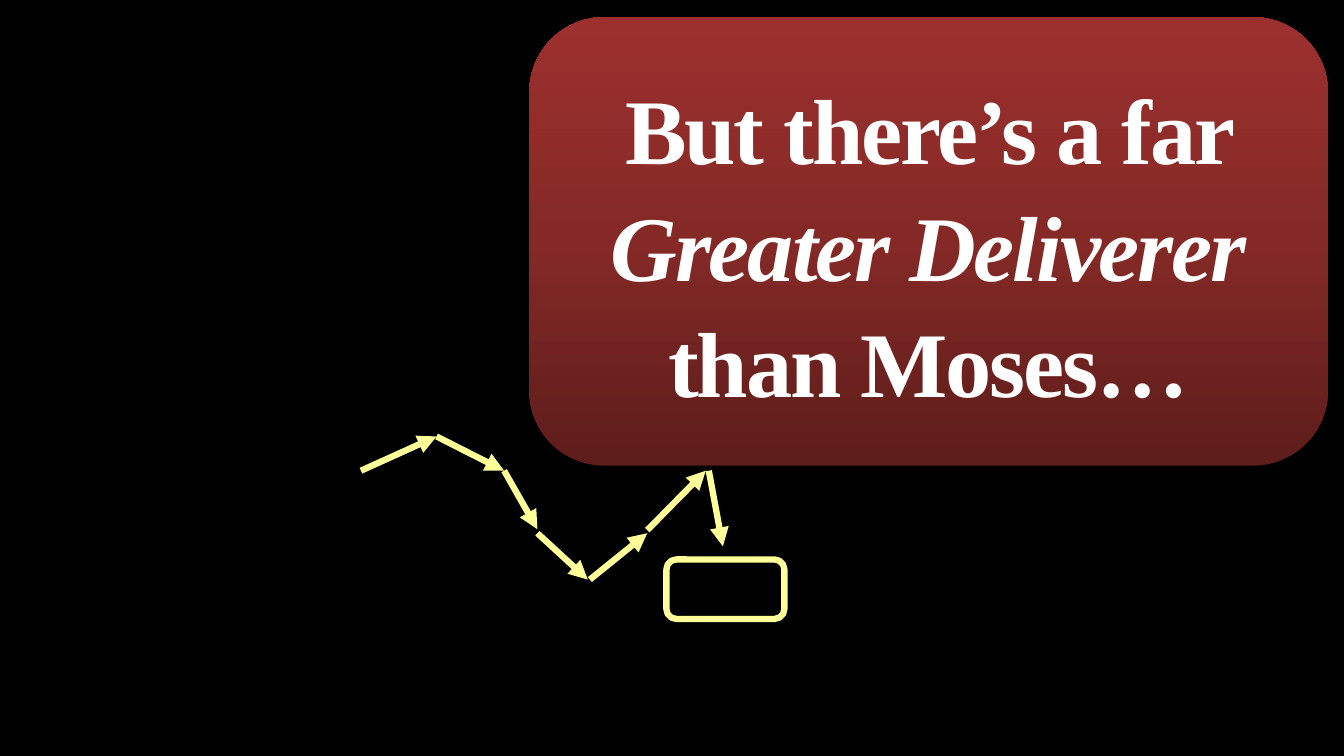
from copy import deepcopy
from dataclasses import dataclass

from lxml.etree import SubElement
from pptx import Presentation
from pptx.dml.color import RGBColor
from pptx.enum.shapes import MSO_CONNECTOR, MSO_SHAPE
from pptx.enum.text import MSO_ANCHOR, PP_ALIGN
from pptx.oxml.ns import qn
from pptx.util import Inches, Pt

MESSAGE = [("But there’s a far ", False), ("Greater Deliverer", True), (" than Moses…", False)]
MESSAGE_BOX = (5.25, 0.17, 7.92, 4.45)
DESTINATION_BOX = (6.61, 5.55, 1.17, 0.59)
ROUTE = [
    ((3.58, 4.67), (4.33, 4.33)),
    ((4.33, 4.33), (5, 4.67)),
    ((5, 4.67), (5.33, 5.25)),
    ((5.33, 5.29), (5.83, 5.75)),
    ((5.85, 5.75), (6.42, 5.29)),
    ((6.42, 5.26), (7, 4.67)),
    ((7.03, 4.67), (7.17, 5.42)),
]


@dataclass
class Theme:
    background: str = "000000"
    route: str = "FFFF99"
    text: str = "FFFFFF"
    gradient: tuple = ((0, "5D1D1B"), (0.5, "842926"), (1, "9C302E"))
    font: str = "Times New Roman"
    message_size: float = 66
    message_tracking: float = -1.5
    line_width: float = 4.5


theme = Theme()


def color(value):
    return RGBColor.from_string(value)


def style_line(line):
    line.color.rgb = color(theme.route)
    line.width = Pt(theme.line_width)


def add_arrow(slide, start, end):
    points = [Inches(value) for value in (*start, *end)]
    connector = slide.shapes.add_connector(MSO_CONNECTOR.STRAIGHT, *points)
    style_line(connector.line)
    properties = connector._element.spPr
    SubElement(properties.find(qn("a:ln")), qn("a:tailEnd"), type="triangle")
    SubElement(properties, qn("a:effectLst"))


def add_rounded_box(slide, box):
    shape = slide.shapes.add_shape(MSO_SHAPE.ROUNDED_RECTANGLE, *map(Inches, box))
    shape.shadow.inherit = False
    return shape


def fill_gradient(fill, stops, angle):
    fill.gradient()
    fill.gradient_angle = angle
    first = fill.gradient_stops[0]._gs
    first.addnext(deepcopy(first))
    for stop, (position, value) in zip(fill.gradient_stops, stops):
        stop.position = position
        stop.color.rgb = color(value)


def write_text(shape, runs, *, size, font, text_color, bold, tracking, line_spacing):
    frame = shape.text_frame
    frame.word_wrap = True
    frame.vertical_anchor = MSO_ANCHOR.MIDDLE
    paragraph = frame.paragraphs[0]
    paragraph.alignment = PP_ALIGN.CENTER
    paragraph.line_spacing = line_spacing
    for text, italic in runs:
        run = paragraph.add_run()
        run.text = text
        run.font.name = font
        run.font.size = Pt(size)
        run.font.bold = bold
        run.font.italic = italic
        run.font.color.rgb = color(text_color)
        run.font._element.set("spc", str(int(tracking * 100)))


def main():
    presentation = Presentation()
    presentation.slide_width = Inches(13.33)
    presentation.slide_height = Inches(7.5)
    slide = presentation.slides.add_slide(presentation.slide_layouts[6])
    slide.background.fill.solid()
    slide.background.fill.fore_color.rgb = color(theme.background)

    for start, end in ROUTE:
        add_arrow(slide, start, end)

    destination = add_rounded_box(slide, DESTINATION_BOX)
    destination.fill.background()
    style_line(destination.line)

    message = add_rounded_box(slide, MESSAGE_BOX)
    fill_gradient(message.fill, theme.gradient, 90)
    message.line.fill.background()
    write_text(
        message, MESSAGE, size=theme.message_size, font=theme.font, text_color=theme.text,
        bold=True, tracking=theme.message_tracking, line_spacing=1.05,
    )
    presentation.save("out.pptx")


if __name__ == "__main__":
    main()
